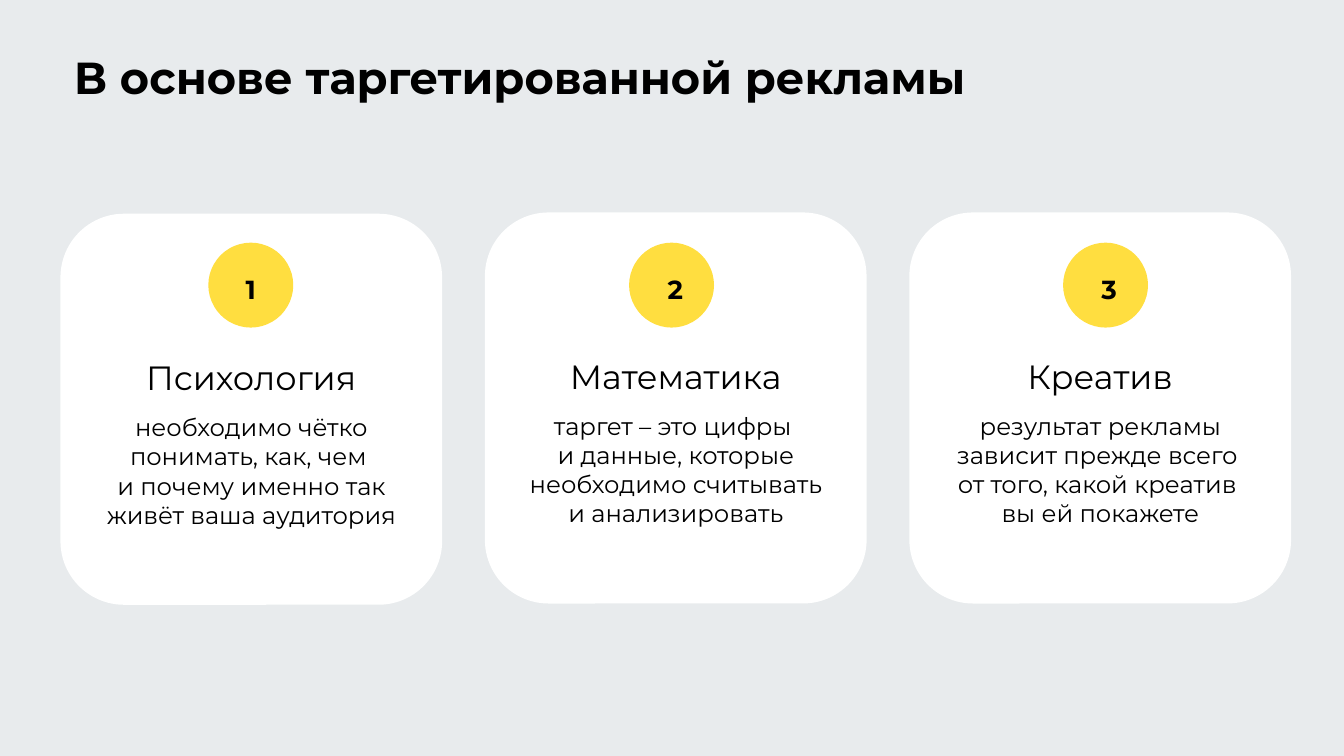
from pptx import Presentation
from pptx.dml.color import RGBColor
from pptx.enum.shapes import MSO_SHAPE
from pptx.enum.text import MSO_ANCHOR, PP_ALIGN
from pptx.util import Pt


def add_run(paragraph, text, size, bold=False):
    run = paragraph.add_run()
    run.text = text
    run.font.name = "Montserrat"
    run.font.size = Pt(size)
    run.font.bold = bold
    run.font.color.rgb = RGBColor.from_string("000000")


def add_panel(kind, left, top, width, height, color, left_inset, top_inset):
    shape = slide.shapes.add_shape(kind, Pt(left), Pt(top), Pt(width), Pt(height))
    shape.shadow.inherit = False
    shape.fill.solid()
    shape.fill.fore_color.rgb = RGBColor.from_string(color)
    shape.line.fill.background()
    frame = shape.text_frame
    frame.word_wrap = True
    frame.vertical_anchor = MSO_ANCHOR.MIDDLE
    frame.margin_left, frame.margin_top = Pt(left_inset), Pt(top_inset)
    frame.margin_right = frame.margin_bottom = Pt(0)
    frame.paragraphs[0].alignment = PP_ALIGN.CENTER
    return shape


presentation = Presentation()
presentation.slide_width = Pt(720)
presentation.slide_height = Pt(405)
slide = presentation.slides.add_slide(presentation.slide_layouts[5])
slide.background.fill.solid()
slide.background.fill.fore_color.rgb = RGBColor.from_string("E8EBED")

title = slide.shapes.title
title.left, title.top, title.width, title.height = Pt(32.4), Pt(19.4), Pt(517), Pt(41)
frame = title.text_frame
frame.word_wrap = True
frame.vertical_anchor = MSO_ANCHOR.TOP
frame.margin_left = frame.margin_right = frame.margin_top = frame.margin_bottom = Pt(7.2)
frame.paragraphs[0].alignment = PP_ALIGN.LEFT
add_run(frame.paragraphs[0], "В основе таргетированной рекламы", 24, True)

cards = [
    ("Психология", ["необходимо чётко понимать, как, чем ",
                    "и почему именно так живёт ваша аудитория"], 114.5, 111.6, 0),
    ("Математика", ["таргет – это цифры ",
                    "и данные, которые необходимо считывать",
                    "и анализировать"], 113.8, 337, 4),
    ("Креатив", ["результат рекламы зависит прежде всего ",
                 "от того, какой креатив ",
                 "вы ей покажете"], 113.8, 569.5, 4),
]

for index, (heading, lines, card_top, circle_left, digit_shift) in enumerate(cards):
    card = add_panel(MSO_SHAPE.ROUNDED_RECTANGLE, 32.4 + 227.4 * index, card_top,
                     204.5, 209.5, "FFFFFF", 0, 36.4)
    add_run(card.text_frame.paragraphs[0], heading, 18)
    paragraph = card.text_frame.add_paragraph()
    paragraph.alignment = PP_ALIGN.CENTER
    paragraph.space_before = paragraph.space_after = Pt(8)
    for number, line in enumerate(lines):
        if number:
            paragraph.add_line_break()
        add_run(paragraph, line, 13)

    circle = add_panel(MSO_SHAPE.OVAL, circle_left, 130, 45.5, 45.5,
                       "FFDE40", digit_shift, 4)
    add_run(circle.text_frame.paragraphs[0], str(index + 1), 14, True)

presentation.save("out.pptx")
